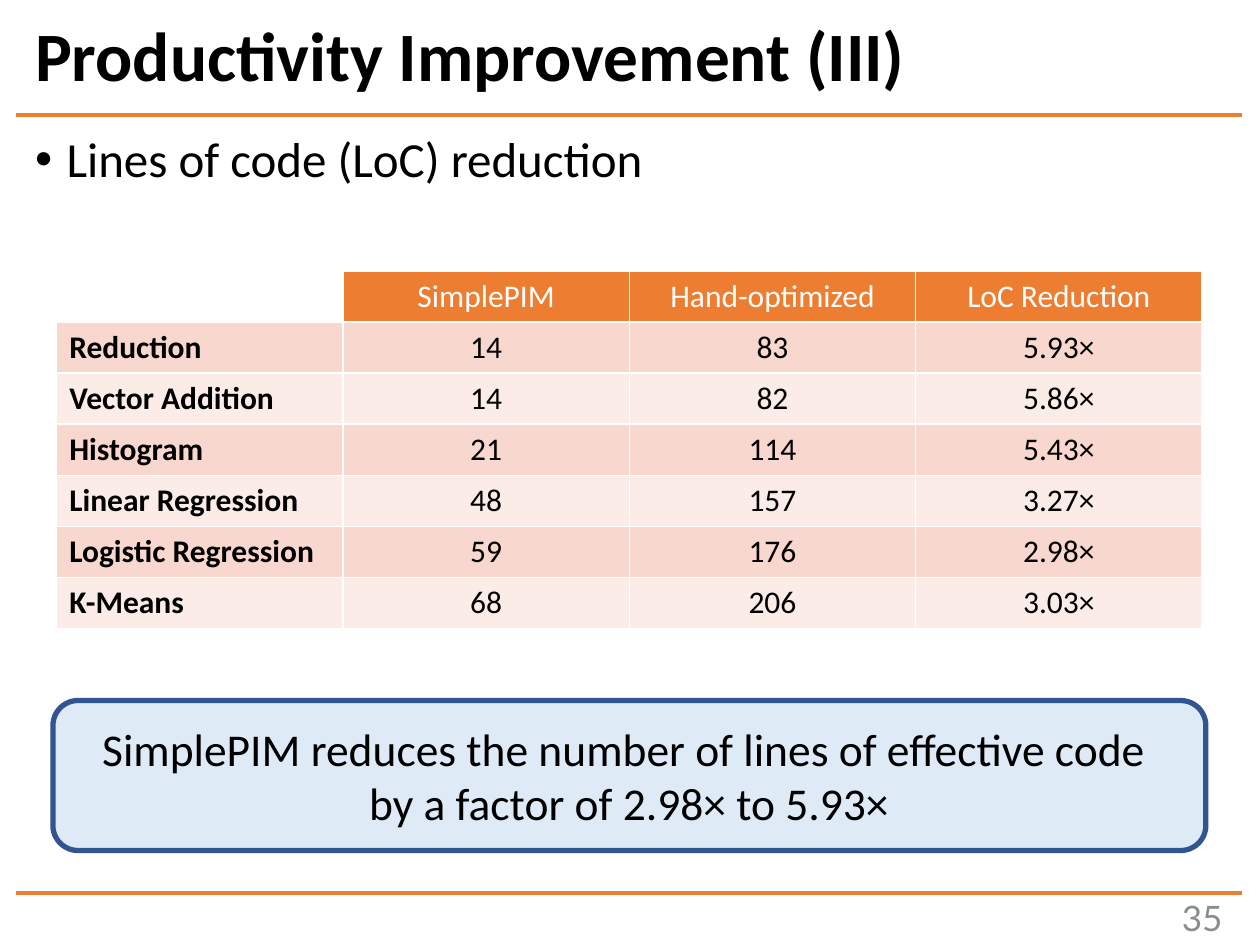
from lxml.etree import SubElement
from pptx import Presentation
from pptx.dml.color import RGBColor
from pptx.enum.shapes import MSO_CONNECTOR, MSO_SHAPE
from pptx.enum.text import MSO_ANCHOR, PP_ALIGN
from pptx.oxml.ns import qn
from pptx.util import Inches, Pt

ORANGE, BLACK, WHITE = "ED7D31", "000000", "FFFFFF"
BANDS = ["F8D7CE", "FCECE8"]
HEADER = ["", "SimplePIM", "Hand-optimized", "LoC Reduction"]
ROWS = [
    ["Reduction", "14", "83", "5.93×"],
    ["Vector Addition", "14", "82", "5.86×"],
    ["Histogram", "21", "114", "5.43×"],
    ["Linear Regression", "48", "157", "3.27×"],
    ["Logistic Regression", "59", "176", "2.98×"],
    ["K-Means", "68", "206", "3.03×"],
]


def rgb(value):
    """Turn a hex string into a colour."""
    return RGBColor.from_string(value)


def add_run(p, text, size, color=BLACK, bold=False, font="Calibri"):
    """Add one formatted run to a paragraph."""
    r = p.add_run()
    r.text = text
    r.font.size, r.font.name, r.font.bold = Pt(size), font, bold
    r.font.color.rgb = rgb(color)


def add_text_box(s, box, anchor=MSO_ANCHOR.TOP):
    """Add a wrapping text box and return its first paragraph."""
    tf = s.shapes.add_textbox(*map(Inches, box)).text_frame
    tf.word_wrap = True
    tf.vertical_anchor = anchor
    return tf.paragraphs[0]


def add_title(s, box, text):
    """Place the slide title."""
    p = add_text_box(s, box, MSO_ANCHOR.MIDDLE)
    p.line_spacing = 0.9
    add_run(p, text, 39.6, bold=True)


def add_bullet(s, box, text):
    """Place the bulleted statement."""
    p = add_text_box(s, box)
    pPr = p._p.get_or_add_pPr()
    pPr.set("marL", str(Inches(0.25)))
    pPr.set("indent", str(Inches(-0.25)))
    SubElement(pPr, qn("a:buFont"), typeface="Arial")
    SubElement(pPr, qn("a:buChar"), char="•")
    p.line_spacing = 0.9
    add_run(p, text, 28)


def add_rule(s, left, top, width):
    """Draw a horizontal orange rule."""
    x1, x2, y = Inches(left), Inches(left + width), Inches(top)
    line = s.shapes.add_connector(MSO_CONNECTOR.STRAIGHT, x1, y, x2, y)
    line.line.color.rgb = rgb(ORANGE)
    line.line.width = Pt(2.25)
    SubElement(line._element.spPr, qn("a:effectLst"))


def add_borders(cell, color, width):
    """Give all four sides of a cell the same border."""
    tcPr = cell._tc.get_or_add_tcPr()
    for side in "LRTB":
        ln = SubElement(tcPr, qn(f"a:ln{side}"), w=str(Pt(width)))
        fill = SubElement(ln, qn("a:solidFill"))
        SubElement(fill, qn("a:srgbClr"), val=color)


def add_loc_table(s, box):
    """Place the table of code lengths."""
    data = [HEADER] + ROWS
    table = s.shapes.add_table(len(data), len(HEADER), *map(Inches, box)).table
    for i, values in enumerate(data):
        for j, text in enumerate(values):
            cell = table.cell(i, j)
            add_borders(cell, WHITE, 1)
            if not text:
                cell.fill.background()
                continue
            cell.fill.solid()
            cell.fill.fore_color.rgb = rgb(BANDS[(i - 1) % 2] if i else ORANGE)
            p = cell.text_frame.paragraphs[0]
            p.alignment = PP_ALIGN.CENTER if j else PP_ALIGN.LEFT
            add_run(p, text, 18, BLACK if i else WHITE, bold=j == 0)


def add_callout(s, box, lines):
    """Place the rounded box with the conclusion."""
    sp = s.shapes.add_shape(MSO_SHAPE.ROUNDED_RECTANGLE, *map(Inches, box))
    sp.shadow.inherit = False
    sp.fill.solid()
    sp.fill.fore_color.rgb = rgb("DEEBF7")
    sp.line.color.rgb = rgb("325491")
    sp.line.width = Pt(3)
    tf = sp.text_frame
    tf.word_wrap = True
    tf.vertical_anchor = MSO_ANCHOR.MIDDLE
    for i, text in enumerate(lines):
        p = tf.add_paragraph() if i else tf.paragraphs[0]
        p.alignment = PP_ALIGN.CENTER
        add_run(p, text, 26)


def add_page_number(s, box, number):
    """Place the page number at the right."""
    p = add_text_box(s, box, MSO_ANCHOR.MIDDLE)
    p.alignment = PP_ALIGN.RIGHT
    add_run(p, number, 20, "8C8C8C", font="Lato")


def main():
    """Build and save the slide."""
    prs = Presentation()
    prs.slide_width, prs.slide_height = Inches(10), Inches(7.5)
    s = prs.slides.add_slide(prs.slide_layouts[6])
    add_page_number(s, (8.72, 7.08, 1.08, 0.4), "35")
    for top in (0.91, 7.09):
        add_rule(s, 0.13, top, 9.73)
    add_title(s, (0.18, 0.14, 9.73, 0.66), "Productivity Improvement (III)")
    add_bullet(s, (0.18, 1.02, 9.53, 6.02), "Lines of code (LoC) reduction")
    add_loc_table(s, (0.45, 2.15, 9.09, 2.84))
    add_callout(s, (0.42, 5.56, 9.15, 1.19), [
        "SimplePIM reduces the number of lines of effective code ",
        "by a factor of 2.98× to 5.93×",
    ])
    prs.save("out.pptx")


if __name__ == "__main__":
    main()
